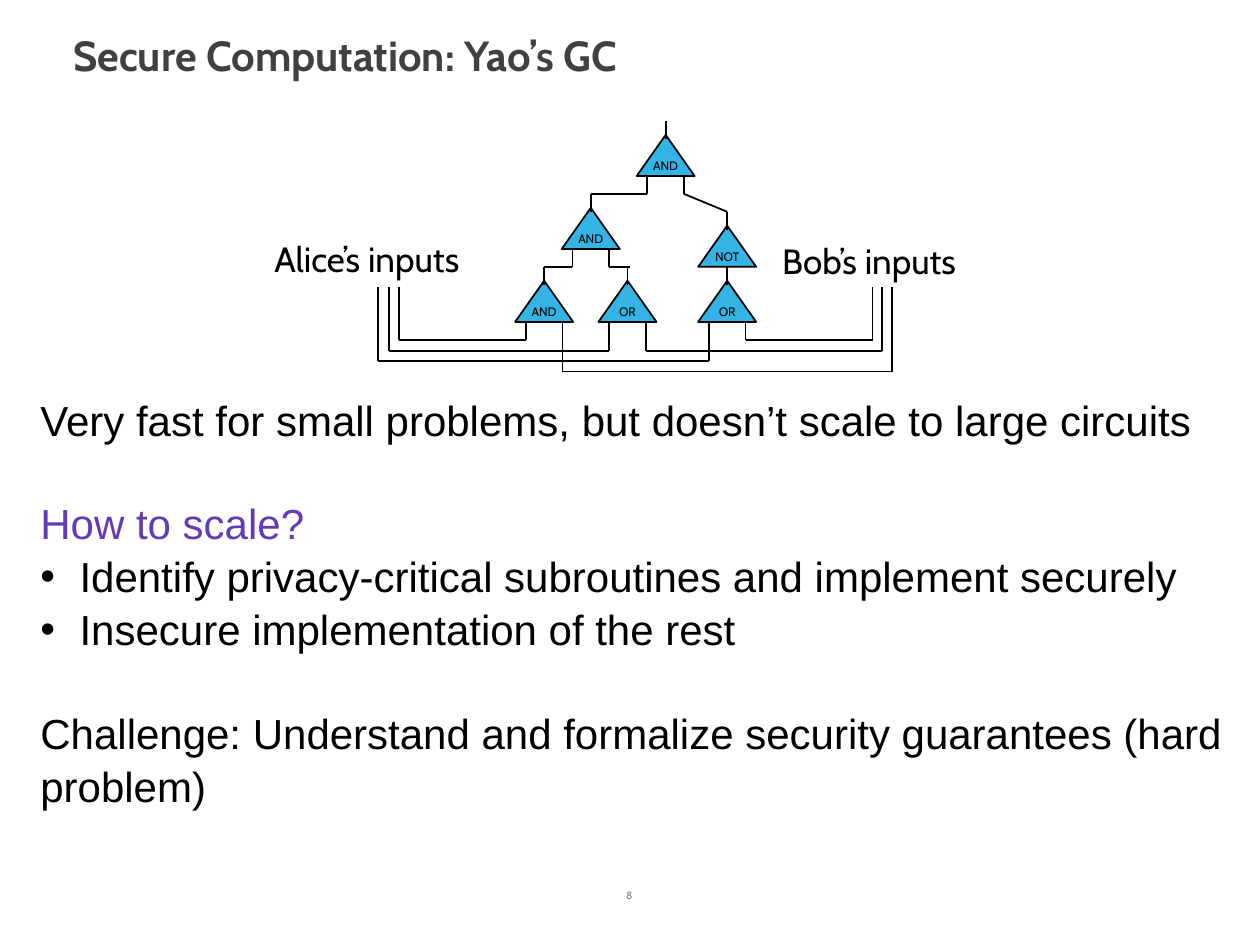
"""Build the slide on secure computation with garbled circuits."""
from itertools import pairwise

from lxml.etree import SubElement
from pptx import Presentation
from pptx.dml.color import RGBColor
from pptx.enum.shapes import MSO_CONNECTOR, MSO_SHAPE
from pptx.enum.text import MSO_ANCHOR as Anchor, MSO_AUTO_SIZE as AutoSize, PP_ALIGN as Align
from pptx.oxml.ns import qn
from pptx.util import Cm, Pt

COLORS = {"black": "000000", "title": "404040", "question": "6639B7",
          "gate": "34B4E4", "number": "808080"}
GATE_WIDTH, GATE_HEIGHT = 1.17, 0.83
PIN_LENGTH, PIN_OFFSET = 0.36, 0.37
STEM_RISE = 0.28
INPUT_TOP, LEG_END = 5.79, 6.85

GATES = [("AND", 13.42, 2.72, True), ("AND", 11.91, 4.19, True),
         ("NOT", 14.66, 4.55, False), ("AND", 10.97, 5.66, True),
         ("OR", 12.65, 5.66, True), ("OR", 14.66, 5.66, True)]
GATE_LINKS = [[(13.79, 3.91), (14.66, 4.27)], [(13.05, 3.91), (11.91, 3.91)],
              [(11.54, 5.38), (10.97, 5.38)], [(12.28, 5.38), (12.7, 5.38)]]
INPUT_WIRES = [(8.05, 6.85, 10.6), (7.84, 7.07, 12.28), (7.62, 7.28, 14.29),
               (17.59, 6.85, 15.03), (17.78, 7.07, 13.02), (17.99, 7.49, 11.34)]
BODY = [("Very fast for small problems, but doesn’t scale to large circuits", "black", False, 0),
        ("How to scale?", "question", False, 29),
        ("Identify privacy-critical subroutines and implement securely", "black", True, 0),
        ("Insecure implementation of the rest", "black", True, 0),
        ("Challenge: Understand and formalize security guarantees (hard problem)",
         "black", False, 29)]


class CircuitSlide:
    """Hold the style and the current slide, and draw its elements."""

    def __init__(self, slide, font="Cabin", line_width=1):
        self.slide = slide
        self.font = font
        self.line_width = Pt(line_width)

    def color(self, name):
        return RGBColor.from_string(COLORS[name])

    def place(self, shape, left, top, width, height):
        shape.left, shape.top = Cm(left), Cm(top)
        shape.width, shape.height = Cm(width), Cm(height)

    def style(self, paragraph, size, color="black", align=Align.LEFT, font=None, bold=False):
        paragraph.alignment = align
        paragraph.font.name = font or self.font
        paragraph.font.size = Pt(size)
        paragraph.font.bold = bold
        paragraph.font.color.rgb = self.color(color)

    def title(self, text, *box):
        shape = self.slide.shapes.title
        self.place(shape, *box)
        frame = shape.text_frame
        frame.text = text
        frame.auto_size = AutoSize.NONE
        frame.vertical_anchor = Anchor.TOP
        frame.margin_top = Cm(0.18)
        self.style(frame.paragraphs[0], 24, "title", bold=True)

    def body(self, items, *box):
        shape = self.slide.placeholders[1]
        self.place(shape, *box)
        frame = shape.text_frame
        frame.text = "\n".join(item[0] for item in items)
        frame.auto_size = AutoSize.NONE
        for paragraph, (_, color, bulleted, gap) in zip(frame.paragraphs, items):
            self.style(paragraph, 24, color, font="Arial")
            paragraph.line_spacing = 1.05
            paragraph.space_before = Pt(gap)
            properties = paragraph._p.get_or_add_pPr()
            indent = Cm(0.79) if bulleted else 0
            properties.set("marL", str(indent))
            properties.set("indent", str(-indent))
            bullet = properties.makeelement(qn("a:buChar" if bulleted else "a:buNone"))
            if bulleted:
                bullet.set("char", "•")
            properties.insert_element_before(bullet, "a:tabLst", "a:defRPr", "a:extLst")

    def label(self, text, box, size, anchor=Anchor.TOP, **style):
        shape = self.slide.shapes.add_textbox(*map(Cm, box))
        frame = shape.text_frame
        frame.word_wrap = True
        frame.vertical_anchor = anchor
        frame.text = text
        self.style(frame.paragraphs[0], size, **style)

    def wire(self, points):
        for start, end in pairwise(points):
            if start != end:
                line = self.slide.shapes.add_connector(
                    MSO_CONNECTOR.STRAIGHT, *map(Cm, start + end))
                line.line.color.rgb = self.color("black")
                line.line.width = self.line_width
                SubElement(line._element.spPr, qn("a:effectLst"))

    def gate(self, text, center, top, has_legs):
        shape = self.slide.shapes.add_shape(
            MSO_SHAPE.ISOSCELES_TRIANGLE, Cm(center - GATE_WIDTH / 2), Cm(top),
            Cm(GATE_WIDTH), Cm(GATE_HEIGHT))
        shape.shadow.inherit = False
        shape.fill.solid()
        shape.fill.fore_color.rgb = self.color("gate")
        shape.line.color.rgb = self.color("black")
        shape.line.width = self.line_width
        frame = shape.text_frame
        frame.word_wrap = False
        frame.vertical_anchor = Anchor.MIDDLE
        frame.margin_left = frame.margin_right = frame.margin_top = frame.margin_bottom = 0
        frame.text = text
        self.style(frame.paragraphs[0], 7, align=Align.CENTER)
        pins = [(center, top - STEM_RISE)]
        if has_legs:
            pins += [(center + side * PIN_OFFSET, top + GATE_HEIGHT) for side in (-1, 1)]
        for x, y in pins:
            self.wire([(x, y), (x, y + PIN_LENGTH)])


def main():
    presentation = Presentation()
    presentation.slide_width, presentation.slide_height = Cm(25.4), Cm(19.05)
    page = CircuitSlide(presentation.slides.add_slide(presentation.slide_layouts[1]))
    page.title("Secure Computation: Yao’s GC", 1.22, 0.41, 22.86, 1.57)
    page.body(BODY, 0.56, 7.77, 24.84, 9.25)
    for gate in GATES:
        page.gate(*gate)
    for link in GATE_LINKS:
        page.wire(link)
    for source, level, leg in INPUT_WIRES:
        page.wire([(source, INPUT_TOP), (source, level), (leg, level), (leg, LEG_END)])
    page.label("Alice’s inputs", (5.28, 4.67, 5.23, 1.12), 20)
    page.label("Bob’s inputs", (15.52, 4.7, 4.9, 1.12), 20)
    page.label("8", (12.01, 17.65, 1.35, 0.66), 6, Anchor.BOTTOM,
               color="number", align=Align.CENTER)
    presentation.save("out.pptx")


if __name__ == "__main__":
    main()
